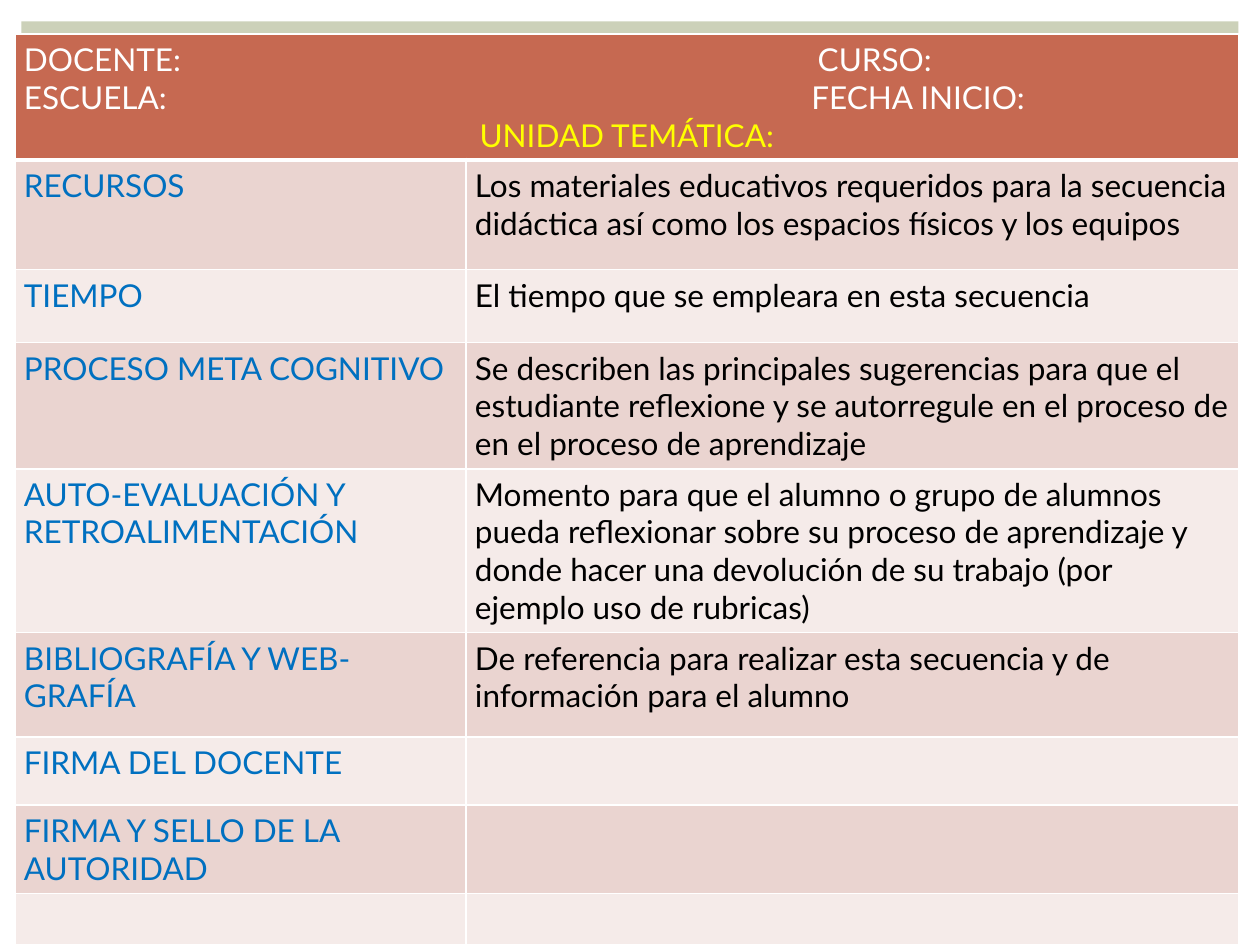
from lxml.etree import SubElement
from pptx import Presentation
from pptx.dml.color import RGBColor
from pptx.enum.shapes import MSO_SHAPE
from pptx.enum.text import PP_ALIGN
from pptx.oxml import parse_xml
from pptx.oxml.ns import nsdecls, qn
from pptx.util import Inches, Pt

WHITE = RGBColor(0xFF, 0xFF, 0xFF)
BLACK = RGBColor(0, 0, 0)
YELLOW = RGBColor(0xFF, 0xFF, 0)
BLUE = RGBColor(0, 0x70, 0xC0)
SAGE = RGBColor(0xCC, 0xD1, 0xB9)
TERRACOTTA = RGBColor(0xC6, 0x69, 0x51)
BANDS = (RGBColor(0xEA, 0xD4, 0xD0), RGBColor(0xF5, 0xEB, 0xE9))

# Text and keyword arguments of each header line
HEADER = [
    ("DOCENTE:\tCURSO:", {"tab": 6.3}),
    ("ESCUELA:\tFECHA INICIO:", {"tab": 6.25}),
    ("UNIDAD TEMÁTICA:", {"color": YELLOW, "align": PP_ALIGN.CENTER}),
]
HEADER_HEIGHT = 0.99
# Label, description, row height
ROWS = [
    ("RECURSOS", "Los materiales educativos requeridos para la secuencia didáctica "
     "así como los espacios físicos y los equipos", 0.87),
    ("TIEMPO", "El tiempo que se empleara en esta secuencia", 0.58),
    ("PROCESO META COGNITIVO", "Se describen las principales sugerencias para que el "
     "estudiante reflexione y se autorregule en el proceso de en el proceso de "
     "aprendizaje", 1.0),
    ("AUTO-EVALUACIÓN Y RETROALIMENTACIÓN", "Momento para que el alumno o grupo de "
     "alumnos pueda reflexionar sobre su proceso de aprendizaje y donde hacer una "
     "devolución de su trabajo (por ejemplo uso de rubricas)", 1.3),
    ("BIBLIOGRAFÍA Y WEB-GRAFÍA", "De referencia para realizar esta secuencia y de "
     "información para el alumno", 0.83),
    ("FIRMA DEL DOCENTE", "", 0.54),
    ("FIRMA Y SELLO DE LA AUTORIDAD", "", 0.7),
    ("", "", 0.4),
]
COLUMN_WIDTHS = (3.58, 6.13)


def write(paragraph, text, color=WHITE, align=PP_ALIGN.LEFT, tab=None):
    paragraph.alignment = align
    if tab:
        tabs = SubElement(paragraph._p.get_or_add_pPr(), qn("a:tabLst"))
        SubElement(tabs, qn("a:tab"), pos=str(Inches(tab)), algn="l")
    if text:
        run = paragraph.add_run()
        run.text = text
        run.font.name, run.font.size = "Lato", Pt(18)
        run.font.color.rgb = color


def style_cell(cell, fill, bottom=1):
    cell.margin_left = cell.margin_right = Inches(0.07)
    cell.margin_top = cell.margin_bottom = Inches(0.05)
    cell.fill.solid()
    cell.fill.fore_color.rgb = fill
    properties = cell._tc.get_or_add_tcPr()
    for index, (side, width) in enumerate(zip("LRTB", (1, 1, 1, bottom))):
        properties.insert(index, parse_xml(
            f'<a:ln{side} {nsdecls("a")} w="{Pt(width)}"><a:solidFill>'
            f'<a:srgbClr val="{WHITE}"/></a:solidFill></a:ln{side}>'))


presentation = Presentation()
presentation.slide_width, presentation.slide_height = Inches(10), Inches(7.5)
slide = presentation.slides.add_slide(presentation.slide_layouts[6])

backdrop = slide.shapes.add_shape(
    MSO_SHAPE.RECTANGLE, Inches(0.17), Inches(0.17), Inches(9.66), Inches(7.17))
backdrop.shadow.inherit = False
backdrop.fill.solid()
backdrop.fill.fore_color.rgb = SAGE
backdrop.line.fill.background()

heights = [HEADER_HEIGHT] + [height for _, _, height in ROWS]
table = slide.shapes.add_table(
    len(heights), len(COLUMN_WIDTHS), Inches(0.12), Inches(0.27),
    Inches(sum(COLUMN_WIDTHS)), Inches(sum(heights))).table
for column, width in zip(table.columns, COLUMN_WIDTHS):
    column.width = Inches(width)
for row, height in zip(table.rows, heights):
    row.height = Inches(height)

header = table.cell(0, 0)
header.merge(table.cell(0, 1))
for column in range(len(COLUMN_WIDTHS)):
    style_cell(table.cell(0, column), TERRACOTTA, bottom=3)
for index, (text, options) in enumerate(HEADER):
    frame = header.text_frame
    write(frame.add_paragraph() if index else frame.paragraphs[0], text, **options)

for index, (label, description, _) in enumerate(ROWS):
    for column, (text, color) in enumerate(((label, BLUE), (description, BLACK))):
        cell = table.cell(index + 1, column)
        style_cell(cell, BANDS[index % 2])
        write(cell.text_frame.paragraphs[0], text, color=color)

presentation.save("out.pptx")
